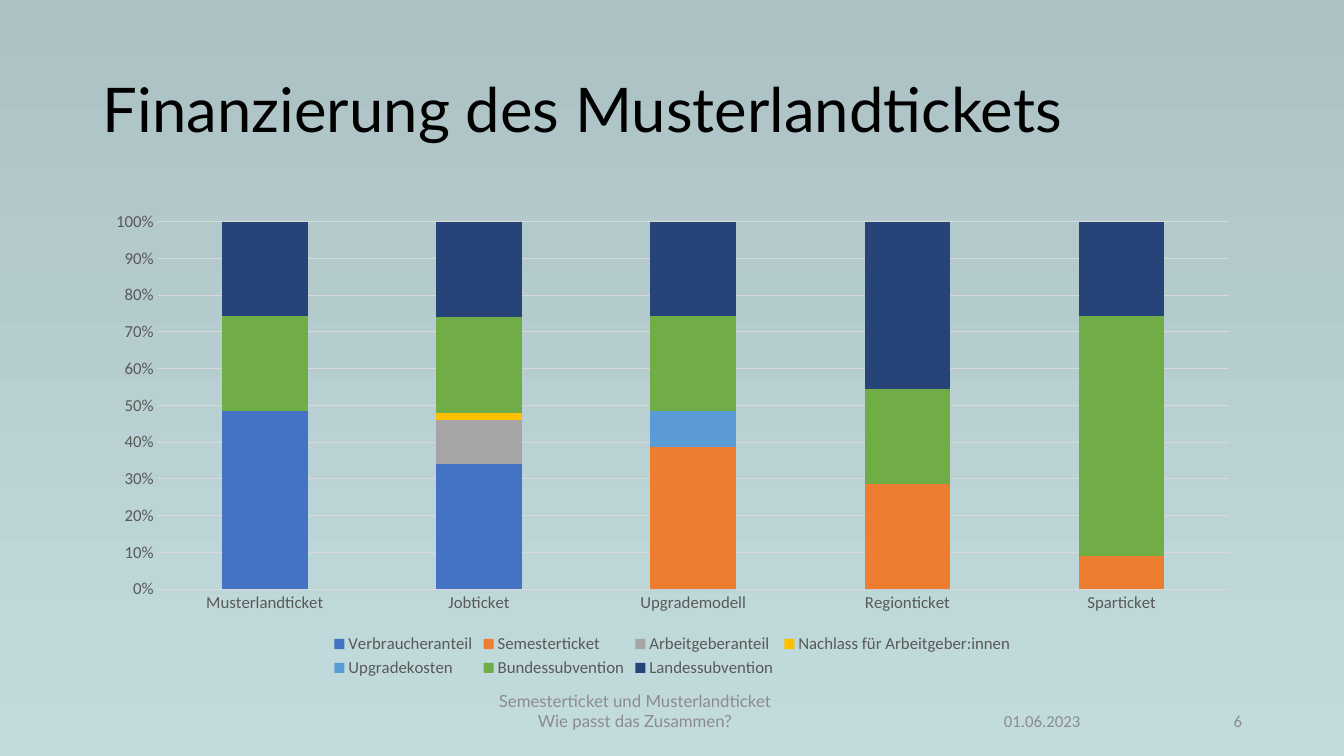
from pptx import Presentation
from pptx.chart.data import CategoryChartData
from pptx.dml.color import RGBColor
from pptx.enum.chart import XL_CHART_TYPE, XL_LEGEND_POSITION, XL_TICK_MARK
from pptx.enum.text import MSO_ANCHOR, PP_ALIGN
from pptx.util import Emu, Pt

SCALE = 914400 / 100.8
COLORS = {"top": "ACC1C4", "base": "C2DCDD", "title": "000000",
          "label": "595959", "grid": "D9D9D9", "foot": "8C8C8C"}
TICKETS = ["Musterlandticket", "Jobticket", "Upgrademodell",
           "Regionticket", "Sparticket"]
SHARES = [
    ("Verbraucheranteil", "4472C4", (49, 34, 0, 0, None)),
    ("Semesterticket", "ED7D31", (0, 0, 39, 29, 9)),
    ("Arbeitgeberanteil", "A5A5A5", (0, 12, 0, 0, None)),
    ("Nachlass für Arbeitgeber:innen", "FFC000", (0, 2, 0, 0, None)),
    ("Upgradekosten", "5B9BD5", (0, 0, 10, 0, None)),
    ("Bundessubvention", "70AD47", (26, 26, 26, 26, 66)),
    ("Landessubvention", "264478", (26, 26, 26, 46, 26)),
]


def px(n):
    """Turn pixels into EMU."""
    return Emu(round(n * SCALE))


def rgb(code):
    """Return the colour for a hex string."""
    return RGBColor.from_string(code)


def style(font, size, color, face="Calibri"):
    """Set size, colour and typeface of a font."""
    font.size = Pt(size)
    font.name = face
    font.color.rgb = rgb(color)


def add_text(slide, box, text, size, color, face="Calibri",
             align=PP_ALIGN.LEFT, space=1.0):
    """Place vertically centred text in a box."""
    frame = slide.shapes.add_textbox(*map(px, box)).text_frame
    frame.word_wrap = True
    frame.vertical_anchor = MSO_ANCHOR.MIDDLE
    frame.text = text
    for para in frame.paragraphs:
        para.alignment = align
        para.line_spacing = space
        for run in para.runs:
            style(run.font, size, color, face)


def add_back(slide):
    """Fill the background with a downward gradient."""
    fill = slide.background.fill
    fill.gradient()
    fill.gradient_angle = 270
    for stop, name in zip(fill.gradient_stops, ("top", "base")):
        stop.color.rgb = rgb(COLORS[name])


def add_shares(slide, box):
    """Place the chart of funding shares in a box."""
    data = CategoryChartData()
    data.categories = TICKETS
    for name, _, values in SHARES:
        data.add_series(name, values)
    chart = slide.shapes.add_chart(
        XL_CHART_TYPE.COLUMN_STACKED_100, *map(px, box), data).chart
    chart.has_title = False
    style(chart.font, 12, COLORS["label"])
    plot = chart.plots[0]
    plot.gap_width = 150
    plot.overlap = 100
    plot.vary_by_categories = False
    for series, (_, color, _) in zip(plot.series, SHARES):
        series.format.fill.solid()
        series.format.fill.fore_color.rgb = rgb(color)
    for axis in (chart.category_axis, chart.value_axis):
        axis.major_tick_mark = XL_TICK_MARK.NONE
        axis.minor_tick_mark = XL_TICK_MARK.NONE
        axis.format.line.fill.background()
        style(axis.tick_labels.font, 12, COLORS["label"])
    axis = chart.value_axis
    axis.minimum_scale, axis.maximum_scale = 0, 1
    axis.major_unit = 0.1
    axis.tick_labels.number_format = "0%"
    axis.tick_labels.number_format_is_linked = False
    grid = axis.major_gridlines.format.line
    grid.width = Pt(0.75)
    grid.color.rgb = rgb(COLORS["grid"])
    chart.has_legend = True
    chart.legend.position = XL_LEGEND_POSITION.BOTTOM
    chart.legend.include_in_layout = False
    style(chart.legend.font, 12, COLORS["label"])


def add_foot(slide, box):
    """Place topic, date and page number along a box."""
    left, top, width, height = box
    gray = COLORS["foot"]
    add_text(slide, (left + 218, top - 10, 648, height),
             "Semesterticket und Musterlandticket\nWie passt das Zusammen?",
             12, gray, "Lato", PP_ALIGN.CENTER)
    add_text(slide, (left + 901, top, 132, height), "01.06.2023", 12, gray)
    add_text(slide, (left + width - 92, top, 92, height), "6", 12, gray,
             align=PP_ALIGN.RIGHT)


def main():
    """Build and save the slide."""
    deck = Presentation()
    deck.slide_width, deck.slide_height = px(1344), px(756)
    slide = deck.slides.add_slide(deck.slide_layouts[6])
    add_back(slide)
    add_text(slide, (93, 40, 1159, 146), "Finanzierung des Musterlandtickets",
             44, COLORS["title"], "Lato", space=0.9)
    add_shares(slide, (93, 202, 1159, 480))
    add_foot(slide, (93, 701, 1159, 40))
    deck.save("out.pptx")


if __name__ == "__main__":
    main()
